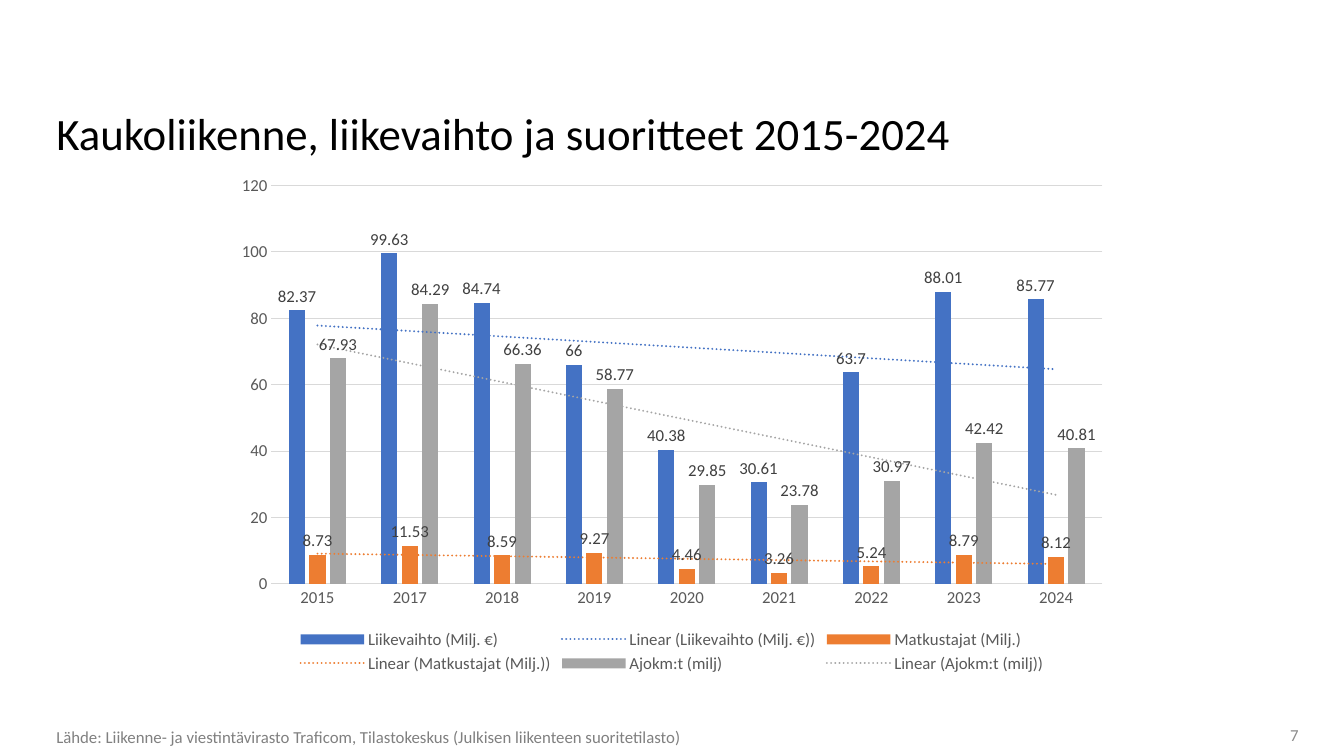
from pptx import Presentation
from pptx.chart.data import CategoryChartData
from pptx.dml.color import RGBColor
from pptx.enum.chart import XL_CHART_TYPE, XL_LABEL_POSITION, XL_LEGEND_POSITION, XL_TICK_MARK
from pptx.enum.text import MSO_ANCHOR, PP_ALIGN
from pptx.oxml import parse_xml
from pptx.oxml.ns import nsdecls, qn
from pptx.util import Inches, Pt

FONT = "Calibri"
YEARS = ["2015", "2017", "2018", "2019", "2020", "2021", "2022", "2023", "2024"]
MEASURES = [
    ("Liikevaihto (Milj. €)", "4472C4",
     [82.37, 99.63, 84.74, 66, 40.38, 30.61, 63.7, 88.01, 85.77]),
    ("Matkustajat (Milj.)", "ED7D31",
     [8.73, 11.53, 8.59, 9.27, 4.46, 3.26, 5.24, 8.79, 8.12]),
    ("Ajokm:t (milj)", "A5A5A5",
     [67.93, 84.29, 66.36, 58.77, 29.85, 23.78, 30.97, 42.42, 40.81]),
]


def color(hex_value):
    """Turn a hex string into a colour."""
    return RGBColor.from_string(hex_value)


def style_font(font, size, hex_value):
    """Set typeface, size and colour of a font."""
    font.name = FONT
    font.size = Pt(size)
    font.color.rgb = color(hex_value)


def style_line(line, hex_value):
    """Give an axis or gridline its thin stroke."""
    line.color.rgb = color(hex_value)
    line.width = Pt(0.75)


def add_text(slide, box, words, size, hex_value, anchor=MSO_ANCHOR.MIDDLE,
             align=PP_ALIGN.LEFT, right_inset=0.1, spacing=1.0):
    """Add one line of text in a box."""
    frame = slide.shapes.add_textbox(*map(Inches, box)).text_frame
    frame.word_wrap = True
    frame.vertical_anchor = anchor
    frame.margin_right = Inches(right_inset)
    frame.text = words
    paragraph = frame.paragraphs[0]
    paragraph.alignment = align
    paragraph.line_spacing = spacing
    style_font(paragraph.runs[0].font, size, hex_value)


def add_trendline(series, hex_value):
    """Add a dotted linear trend to a series."""
    trendline = parse_xml(
        f'<c:trendline {nsdecls("c", "a")}><c:spPr><a:ln w="{Pt(1.5)}" cap="rnd">'
        f'<a:solidFill><a:srgbClr val="{hex_value}"/></a:solidFill>'
        '<a:prstDash val="sysDot"/></a:ln></c:spPr><c:trendlineType val="linear"/>'
        '<c:dispRSqr val="0"/><c:dispEq val="0"/></c:trendline>')
    series._element.find(qn("c:cat")).addprevious(trendline)


def style_series(series, hex_value):
    """Colour a series and add its labels and trend."""
    series.format.fill.solid()
    series.format.fill.fore_color.rgb = color(hex_value)
    series.invert_if_negative = False
    labels = series.data_labels
    labels.show_value = True
    labels.position = XL_LABEL_POSITION.OUTSIDE_END
    style_font(labels.font, 12, "404040")
    add_trendline(series, hex_value)


def style_axes(chart):
    """Format the year axis and the value axis."""
    for axis in (chart.category_axis, chart.value_axis):
        axis.major_tick_mark = axis.minor_tick_mark = XL_TICK_MARK.NONE
        style_font(axis.tick_labels.font, 12, "595959")
    style_line(chart.category_axis.format.line, "D9D9D9")
    values = chart.value_axis
    values.minimum_scale, values.maximum_scale, values.major_unit = 0, 120, 20
    values.format.line.fill.background()
    style_line(values.major_gridlines.format.line, "D9D9D9")


def add_traffic_chart(slide, box):
    """Add the clustered columns with trends and legend."""
    data = CategoryChartData()
    data.categories = YEARS
    for name, _, values in MEASURES:
        data.add_series(name, values)
    chart = slide.shapes.add_chart(
        XL_CHART_TYPE.COLUMN_CLUSTERED, *map(Inches, box), data).chart
    style_font(chart.font, 10, "000000")
    chart.has_title = False
    chart.has_legend = True
    chart.legend.position = XL_LEGEND_POSITION.BOTTOM
    chart.legend.include_in_layout = False
    style_font(chart.legend.font, 12, "595959")
    style_axes(chart)
    plot = chart.plots[0]
    plot.gap_width, plot.overlap = 219, -27
    plot.vary_by_categories = False
    for series, (_, hex_value, _) in zip(plot.series, MEASURES):
        style_series(series, hex_value)


def main():
    """Build the slide and save it."""
    deck = Presentation()
    deck.slide_width, deck.slide_height = Inches(13.33), Inches(7.5)
    slide = deck.slides.add_slide(deck.slide_layouts[6])
    add_text(slide, (0.46, 1, 12.42, 0.63),
             "Kaukoliikenne, liikevaihto ja suoritteet 2015-2024",
             32, "000000", anchor=MSO_ANCHOR.BOTTOM)
    add_traffic_chart(slide, (2.22, 1.64, 8.89, 5.08))
    add_text(slide, (0.46, 7.19, 11.81, 0.26),
             "Lähde: Liikenne- ja viestintävirasto Traficom, Tilastokeskus "
             "(Julkisen liikenteen suoritetilasto)", 12, "808080", spacing=0.9)
    add_text(slide, (12.05, 7.14, 0.83, 0.3), "7", 12, "8C8C8C",
             align=PP_ALIGN.RIGHT, right_inset=0)
    deck.save("out.pptx")


if __name__ == "__main__":
    main()
